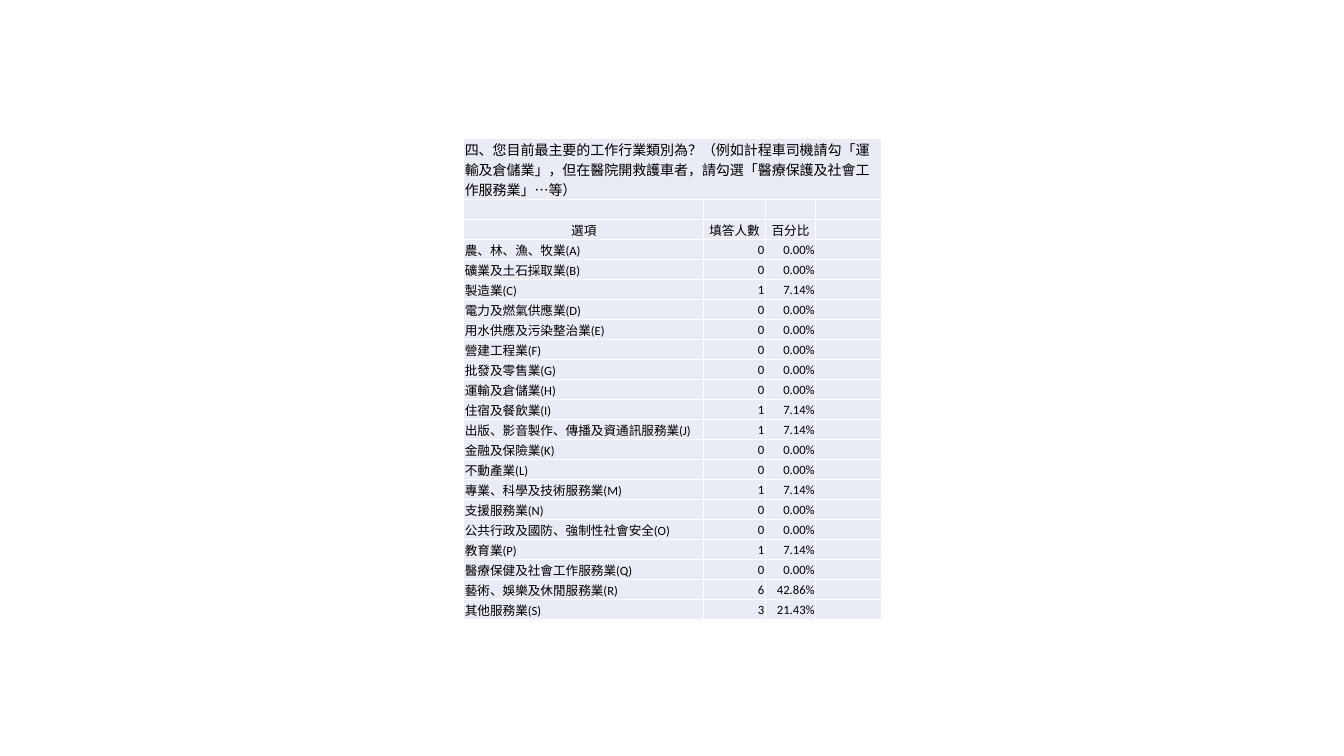
from lxml.etree import SubElement
from pptx import Presentation
from pptx.dml.color import RGBColor
from pptx.enum.text import MSO_ANCHOR, PP_ALIGN
from pptx.oxml.ns import qn
from pptx.util import Inches, Pt

# Content
QUESTION = ("四、您目前最主要的工作行業類別為？（例如計程車司機請勾「運輸及倉儲業」，"
            "但在醫院開救護車者，請勾選「醫療保護及社會工作服務業」…等）")
HEADINGS = ("選項", "填答人數", "百分比", "")
RESPONSES = [
    ("農、林、漁、牧業(A)", 0),
    ("礦業及土石採取業(B)", 0),
    ("製造業(C)", 1),
    ("電力及燃氣供應業(D)", 0),
    ("用水供應及污染整治業(E)", 0),
    ("營建工程業(F)", 0),
    ("批發及零售業(G)", 0),
    ("運輸及倉儲業(H)", 0),
    ("住宿及餐飲業(I)", 1),
    ("出版、影音製作、傳播及資通訊服務業(J)", 1),
    ("金融及保險業(K)", 0),
    ("不動產業(L)", 0),
    ("專業、科學及技術服務業(M)", 1),
    ("支援服務業(N)", 0),
    ("公共行政及國防、強制性社會安全(O)", 0),
    ("教育業(P)", 1),
    ("醫療保健及社會工作服務業(Q)", 0),
    ("藝術、娛樂及休閒服務業(R)", 6),
    ("其他服務業(S)", 3),
]

THEME = {
    "font": "Calibri",
    "question_size": Pt(10),
    "body_size": Pt(9),
    "text": RGBColor(0x00, 0x00, 0x00),
    "fill": RGBColor(0xE9, 0xEB, 0xF5),
    "border": "FFFFFF",
    "border_width": Pt(1),
}

# Layout
LEFT, TOP, HEIGHT = 4.6, 1.37, 4.76
COLUMN_WIDTHS = (2.38, 0.61, 0.5, 0.65)
QUESTION_HEIGHT = 0.59
HEADING_ALIGN = (PP_ALIGN.CENTER,) * 4
RESPONSE_ALIGN = (PP_ALIGN.LEFT, PP_ALIGN.RIGHT, PP_ALIGN.RIGHT, PP_ALIGN.LEFT)


def add_borders(cell):
    properties = cell._tc.get_or_add_tcPr()
    for side in ("a:lnL", "a:lnR", "a:lnT", "a:lnB"):
        line = SubElement(properties, qn(side), w=str(THEME["border_width"]))
        fill = SubElement(line, qn("a:solidFill"))
        SubElement(fill, qn("a:srgbClr"), val=THEME["border"])


def write_cell(cell, text, align, size):
    add_borders(cell)
    cell.fill.solid()
    cell.fill.fore_color.rgb = THEME["fill"]
    cell.margin_left = cell.margin_right = cell.margin_top = Inches(0.01)
    cell.margin_bottom = 0
    cell.vertical_anchor = MSO_ANCHOR.MIDDLE
    paragraph = cell.text_frame.paragraphs[0]
    if text:
        paragraph.text = text
    paragraph.alignment = align
    paragraph.font.name = THEME["font"]
    paragraph.font.size = size
    paragraph.font.color.rgb = THEME["text"]


def main():
    presentation = Presentation()
    presentation.slide_width, presentation.slide_height = Inches(13.33), Inches(7.5)
    slide = presentation.slides.add_slide(presentation.slide_layouts[6])

    # Rows: question, spacer, headings, then one per industry
    total = sum(count for _, count in RESPONSES)
    rows = [((QUESTION, "", "", ""), RESPONSE_ALIGN, THEME["question_size"]),
            (("",) * 4, RESPONSE_ALIGN, THEME["body_size"]),
            (HEADINGS, HEADING_ALIGN, THEME["body_size"])]
    rows += [((industry, str(count), f"{count / total:.2%}", ""),
              RESPONSE_ALIGN, THEME["body_size"]) for industry, count in RESPONSES]

    # Survey table
    survey = slide.shapes.add_table(
        len(rows), len(COLUMN_WIDTHS), Inches(LEFT), Inches(TOP),
        Inches(sum(COLUMN_WIDTHS)), Inches(HEIGHT)).table
    survey.first_row = survey.horz_banding = False
    for column, width in zip(survey.columns, COLUMN_WIDTHS):
        column.width = Inches(width)
    row_height = (HEIGHT - QUESTION_HEIGHT) / (len(rows) - 1)
    for index, (texts, aligns, size) in enumerate(rows):
        survey.rows[index].height = Inches(row_height if index else QUESTION_HEIGHT)
        for cell, text, align in zip(survey.rows[index].cells, texts, aligns):
            write_cell(cell, text, align, size)
    survey.cell(0, 0).merge(survey.cell(0, len(COLUMN_WIDTHS) - 1))

    presentation.save("out.pptx")


if __name__ == "__main__":
    main()
